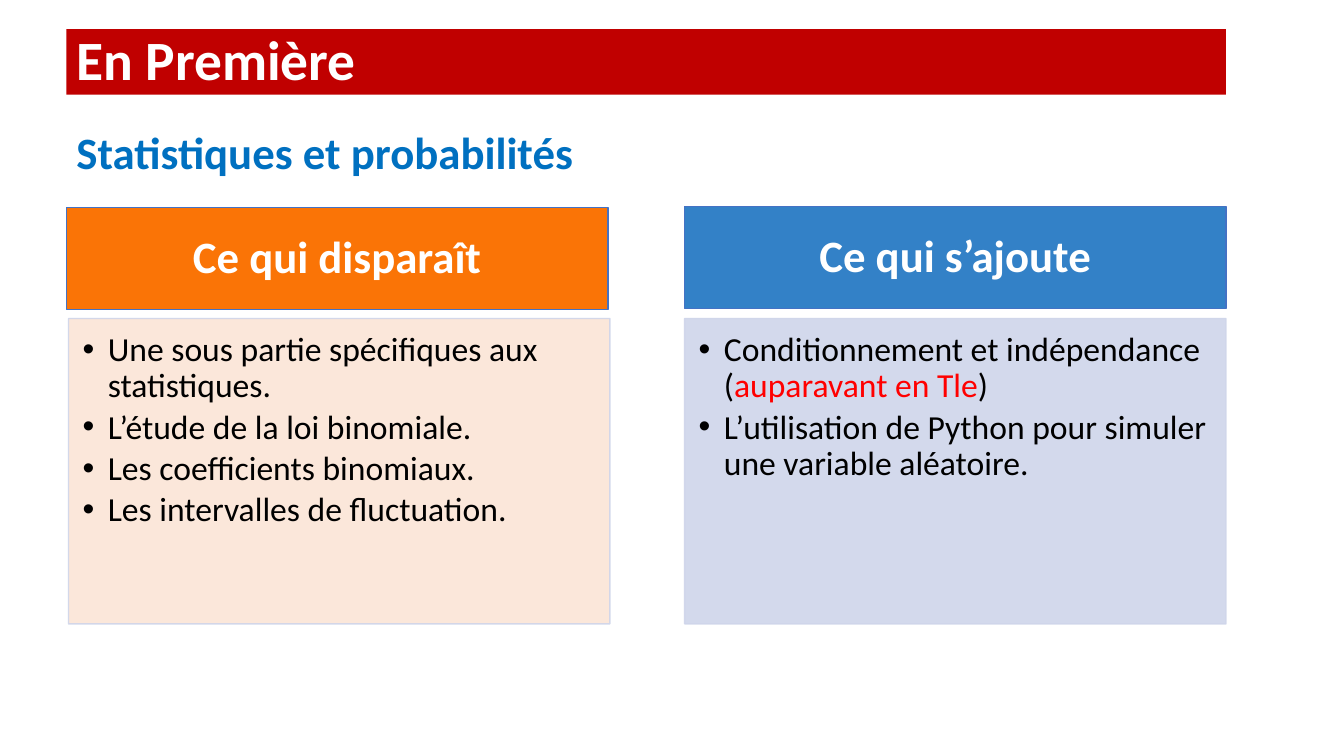
import pptx
import pptx.dml.color
import pptx.enum.shapes
import pptx.enum.text
import pptx.oxml
import pptx.oxml.ns
import pptx.util

ALIGN = pptx.enum.text.PP_ALIGN
ANCHOR = pptx.enum.text.MSO_ANCHOR


def color(value):
    return pptx.dml.color.RGBColor.from_string(value)


def px(value):
    return pptx.util.Emu(value * 9144)


def add_element(parent, xml):
    tag, attributes = xml.split(" ", 1)
    namespace = pptx.oxml.ns.nsdecls("a")
    parent.append(pptx.oxml.parse_xml(f"<a:{tag} {namespace} {attributes}/>"))


def set_opacity(fill, percent):
    choice = fill._xPr.find(pptx.oxml.ns.qn("a:solidFill"))
    add_element(choice[0], f'alpha val="{percent * 1000}"')


def write_text(shape, paragraphs, size, ink="000000", bold=False, align=ALIGN.LEFT,
               anchor=ANCHOR.TOP, insets=(10, 5, 10, 5), after=0, bullet=False):
    frame = shape.text_frame
    frame.word_wrap = True
    frame.vertical_anchor = anchor
    frame.margin_left, frame.margin_top, frame.margin_right, frame.margin_bottom = map(px, insets)
    for index, runs in enumerate(paragraphs):
        paragraph = frame.add_paragraph() if index else frame.paragraphs[0]
        paragraph.alignment = align
        paragraph.line_spacing = 0.9
        paragraph.space_after = pptx.util.Pt(after)
        if bullet:
            properties = paragraph._p.get_or_add_pPr()
            properties.set("marL", str(px(25)))
            properties.set("indent", str(px(-25)))
            add_element(properties, 'buFont typeface="Arial"')
            add_element(properties, 'buChar char="•"')
        for text, run_ink in runs:
            run = paragraph.add_run()
            run.text = text
            run.font.name = "Calibri"
            run.font.size = pptx.util.Pt(size)
            run.font.bold = bold
            run.font.color.rgb = color(run_ink or ink)


class ProgrammeSlide:
    """Hold the slide and the style of its title, subtitle and comparison cards."""

    left, width = 66, 1150
    card_width = 537

    def __init__(self, presentation):
        self.slide = presentation.slides.add_slide(presentation.slide_layouts[6])

    def box(self, left, top, width, height, fill, line=None, opacity=100):
        shape = self.slide.shapes.add_shape(
            pptx.enum.shapes.MSO_SHAPE.RECTANGLE, px(left), px(top), px(width), px(height))
        shape.shadow.inherit = False
        shape.fill.solid()
        shape.fill.fore_color.rgb = color(fill)
        if line:
            shape.line.color.rgb = color(line)
            shape.line.width = pptx.util.Pt(1)
        else:
            shape.line.fill.background()
        if opacity < 100:
            set_opacity(shape.fill, opacity)
            set_opacity(shape.line.fill, opacity)
        return shape

    def title(self, text):
        banner = self.box(self.left, 29, self.width, 65, "C00000")
        write_text(banner, [[(text, None)]], 39.6, ink="FFFFFF", bold=True, anchor=ANCHOR.MIDDLE)

    def subtitle(self, text):
        textbox = self.slide.shapes.add_textbox(px(self.left), px(118), px(self.width), px(65))
        write_text(textbox, [[(text, None)]], 32, ink="0070C0", bold=True, anchor=ANCHOR.BOTTOM)

    def heading(self, text, left, top, fill):
        header = self.box(left, top, self.card_width, 101, fill, "4472C4")
        write_text(header, [[(text, None)]], 32, ink="FFFFFF", bold=True, align=ALIGN.CENTER,
                   anchor=ANCHOR.MIDDLE, insets=(25, 14, 25, 14), after=11.2)

    def bullets(self, items, left, fill):
        body = self.box(left, 316, self.card_width, 303, fill, "CFD5EA", opacity=90)
        write_text(body, items, 24, insets=(14, 14, 19, 21), after=3.6, bullet=True)


def main():
    presentation = pptx.Presentation()
    presentation.slide_width, presentation.slide_height = px(1333), px(750)
    programme = ProgrammeSlide(presentation)
    programme.title("En Première")
    programme.subtitle("Statistiques et probabilités")

    removed = ["Une sous partie spécifiques aux statistiques.", "L’étude de la loi binomiale.",
               "Les coefficients binomiaux.", "Les intervalles de fluctuation."]
    programme.heading("Ce qui disparaît", 66, 206, "FA7406")
    programme.bullets([[(text, None)] for text in removed], 68, "FBE5D6")

    added = [
        [("Conditionnement et indépendance (", None), ("auparavant en Tle", "FF0000"), (")", None)],
        [("L’utilisation de Python pour simuler une variable aléatoire.", None)],
    ]
    programme.heading("Ce qui s’ajoute", 679, 205, "3381C7")
    programme.bullets(added, 679, "CFD5EA")
    presentation.save("out.pptx")


if __name__ == "__main__":
    main()
